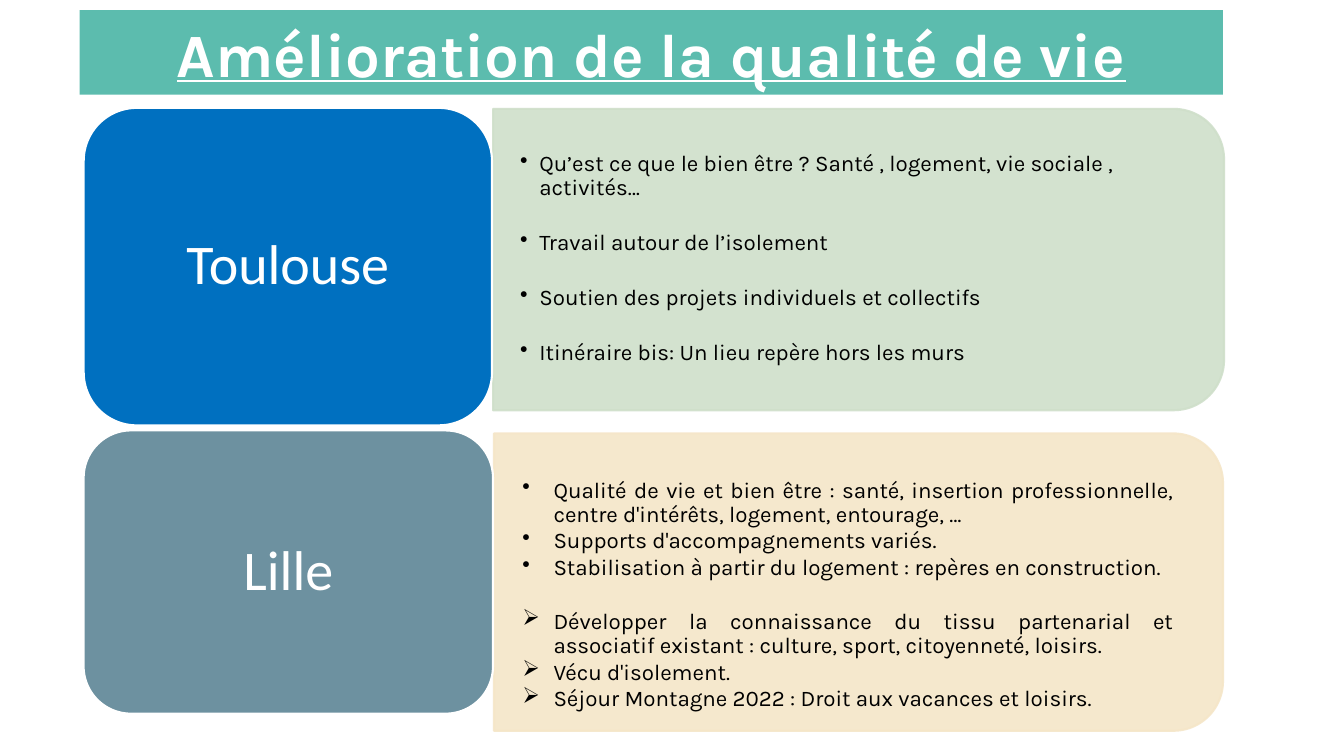
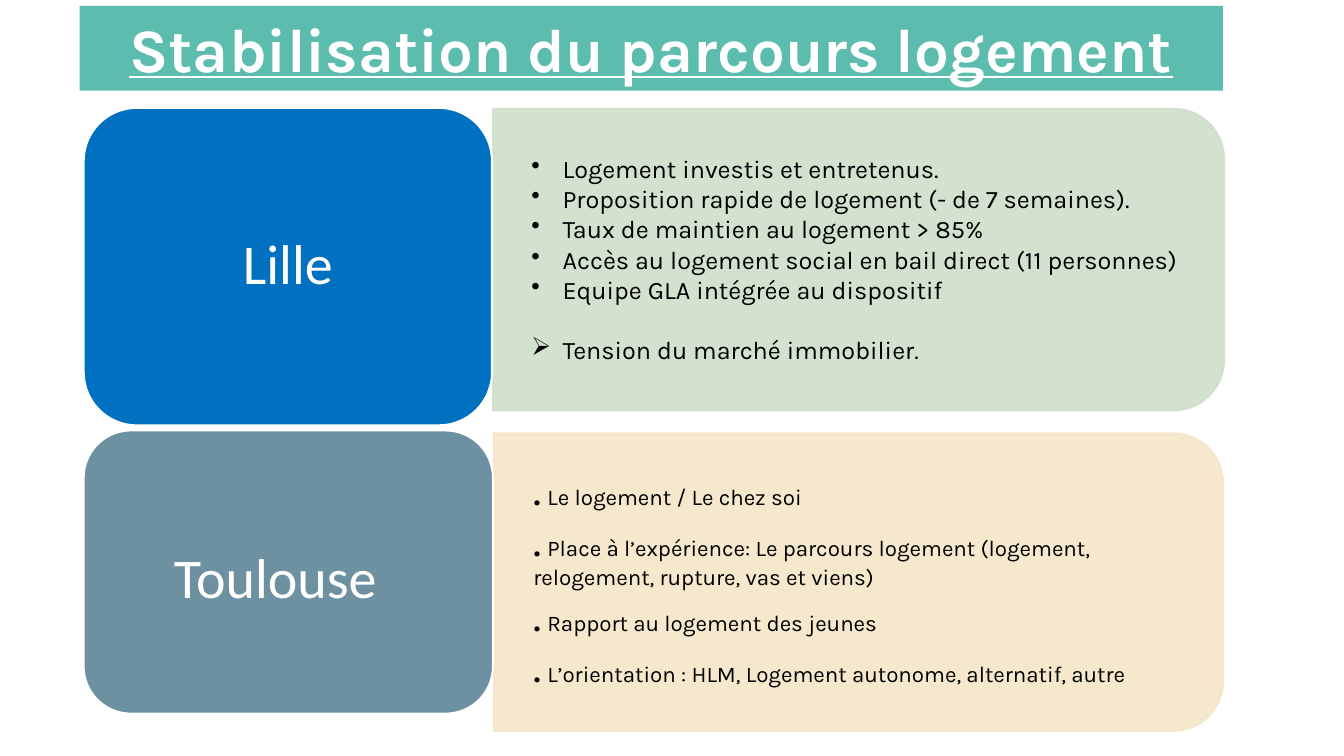
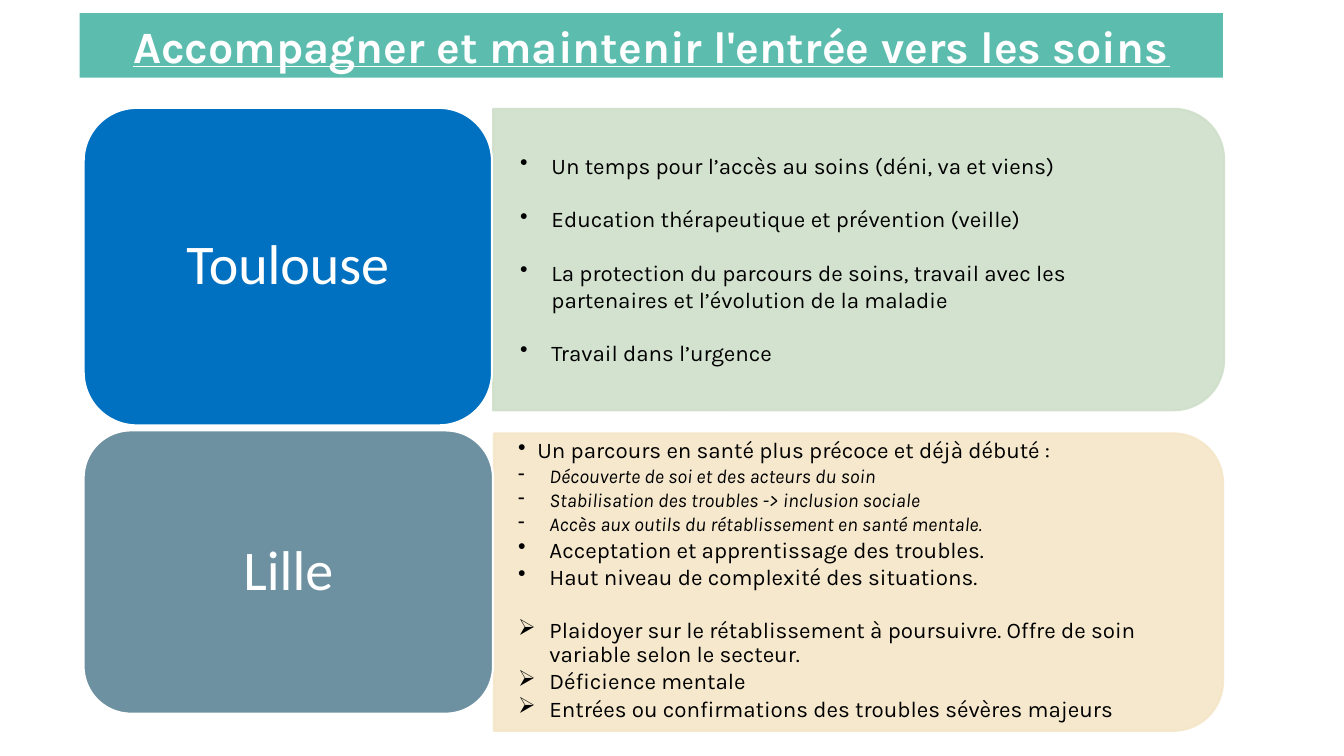
from dataclasses import dataclass
from typing import NamedTuple

from lxml.etree import SubElement
from pptx import Presentation
from pptx.dml.color import RGBColor
from pptx.enum.shapes import MSO_SHAPE as Preset
from pptx.enum.text import MSO_ANCHOR as Anchor, PP_ALIGN as Align
from pptx.oxml.ns import qn
from pptx.util import Emu, Pt

SCALE = 9144  # EMU per px, 100 px to the inch
COLOURS = {
    "banner": "5CBCAE", "blue": "0070C0", "slate": "6D91A0",
    "green": "CFDFCA", "sand": "F5E6C8", "white": "FFFFFF", "black": "000000",
}
BODY_FONT, LABEL_FONT = "Karla", "Calibri"
CORNER = 0.167
DOT, ARROW, DASH = "•", "➢", "-"


class Box(NamedTuple):
    left: int
    top: int
    width: int
    height: int

    def emu(self) -> list[Emu]:
        return [px(value) for value in self]


class Row(NamedTuple):
    label_box: Box
    label_colour: str
    panel_box: Box
    panel_colour: str


@dataclass(frozen=True)
class Item:
    text: str
    mark: str = DOT
    size: int = 16
    gap: float | None = None  # points before, when it opens a new group
    indent: int | None = None
    italic: bool = False
    big_dot: bool = False


@dataclass(frozen=True)
class Panel:
    label: str
    body: Box
    items: list[Item]
    indent: int = 31
    margin: int = 0
    hanging: bool = True
    space: float = 0
    line_spacing: float = 0.9
    align: Align = Align.LEFT
    label_shift: tuple[int, int] = (0, 0)


@dataclass(frozen=True)
class Page:
    title: str
    top: int
    height: int
    size: int
    panels: tuple[Panel, Panel]


ROWS = (
    Row(Box(83, 107, 405, 315), "blue", Box(489, 108, 725, 299), "green"),
    Row(Box(83, 427, 406, 281), "slate", Box(490, 430, 723, 295), "sand"),
)


def px(value: float) -> Emu:
    return Emu(int(value * SCALE))


def rgb(name: str) -> RGBColor:
    return RGBColor.from_string(COLOURS[name])


def set_insets(frame, left: int, top: int, right: int, bottom: int) -> None:
    frame.word_wrap = True
    frame.vertical_anchor = Anchor.MIDDLE
    frame.margin_left, frame.margin_top = px(left), px(top)
    frame.margin_right, frame.margin_bottom = px(right), px(bottom)


def set_font(font, name: str, colour: str, size: int | None = None) -> None:
    font.name = name
    font.color.rgb = rgb(colour)
    if size:
        font.size = Pt(size)


def add_block(page, preset: Preset, box: Box, colour: str, line: str | None = None):
    shape = page.shapes.add_shape(preset, *box.emu())
    shape.shadow.inherit = False
    shape.fill.solid()
    shape.fill.fore_color.rgb = rgb(colour)
    if line:
        shape.line.color.rgb = rgb(line)
        shape.line.width = Pt(1.5)
    else:
        shape.line.fill.background()
    return shape


def add_banner(page, spec: Page) -> None:
    banner = add_block(page, Preset.RECTANGLE, Box(79, spec.top, 1134, spec.height), "banner")
    set_insets(banner.text_frame, 10, 5, 10, 5)
    para = banner.text_frame.paragraphs[0]
    para.alignment = Align.CENTER
    set_font(para.font, BODY_FONT, "white", spec.size)
    para.font.bold = para.font.underline = True
    para.add_run().text = spec.title


def add_panel_back(page, box: Box, colour: str) -> None:
    """Draw the panel upright, then turn it so its round corners face right."""
    turn = (box.width - box.height) // 2
    upright = Box(box.left + turn, box.top - turn, box.height, box.width)
    back = add_block(page, Preset.ROUND_2_SAME_RECTANGLE, upright, colour, colour)
    back.rotation = 90
    back.adjustments[0], back.adjustments[1] = CORNER, 0
    for tint in back._element.spPr.iter(qn("a:srgbClr")):
        SubElement(tint, qn("a:alpha"), val="90000")


def add_label(page, row: Row, panel: Panel) -> None:
    label = add_block(page, Preset.ROUNDED_RECTANGLE, row.label_box, row.label_colour, "white")
    label.adjustments[0] = CORNER
    right, down = panel.label_shift
    set_insets(label.text_frame, 17, 8 + 2 * down, 17 - 2 * right, 8)
    para = label.text_frame.paragraphs[0]
    para.alignment = Align.CENTER
    para.line_spacing = 0.9
    set_font(para.font, LABEL_FONT, "white", 40)
    para.add_run().text = panel.label


def set_bullet(para, mark: str, margin: int, hang: int) -> None:
    props = para._p.get_or_add_pPr()
    props.set("marL", str(px(margin)))
    props.set("indent", str(px(-hang)))
    if mark:
        colour = SubElement(props, qn("a:buClr"))
        SubElement(colour, qn("a:srgbClr"), val=COLOURS["black"])
        SubElement(props, qn("a:buChar"), char=mark)
    else:
        SubElement(props, qn("a:buNone"))


def add_item(para, item: Item, panel: Panel) -> None:
    indent = item.indent or panel.indent
    hang = indent if panel.hanging else 0
    set_bullet(para, item.mark, panel.margin + indent, hang)
    para.alignment = panel.align
    para.line_spacing = panel.line_spacing
    para.space_before = Pt(panel.space if item.gap is None else item.gap)
    set_font(para.font, BODY_FONT, "black", None if item.big_dot else item.size)
    para.font.italic = item.italic
    if item.big_dot:
        for text, size in ((".", 32), (" ", 18), (item.text, item.size)):
            span = para.add_run()
            span.text = text
            span.font.size = Pt(size)
    else:
        para.add_run().text = item.text


def add_body(page, panel: Panel) -> None:
    frame = page.shapes.add_textbox(*panel.body.emu()).text_frame
    set_insets(frame, 27, 14, 27, 14)
    for index, item in enumerate(panel.items):
        para = frame.add_paragraph() if index else frame.paragraphs[0]
        add_item(para, item, panel)


def add_page(deck, spec: Page) -> None:
    page = deck.slides.add_slide(deck.slide_layouts[6])
    add_banner(page, spec)
    for row, panel in zip(ROWS, spec.panels):
        add_panel_back(page, row.panel_box, row.panel_colour)
        add_body(page, panel)
        add_label(page, row, panel)


# Content
QUALITY = Page("Amélioration de la qualité de vie", 10, 84, 44, (
    Panel("Toulouse", Box(489, 122, 714, 270), [
        Item("Qu’est ce que le bien être ? Santé , logement, vie sociale , activités…"),
        Item("Travail autour de l’isolement", gap=22),
        Item("Soutien des projets individuels et collectifs", gap=22),
        Item("Itinéraire bis: Un lieu repère hors les murs", gap=22),
    ], indent=19, space=2.4),
    Panel("Lille", Box(478, 457, 713, 267), [
        Item("Qualité de vie et bien être : santé, insertion professionnelle, "
             "centre d'intérêts, logement, entourage, …"),
        Item("Supports d'accompagnements variés."),
        Item("Stabilisation à partir du logement : repères en construction."),
        Item("Développer la connaissance du tissu partenarial et associatif existant : "
             "culture, sport, citoyenneté, loisirs.", ARROW, gap=21),
        Item("Vécu d'isolement.", ARROW),
        Item("Séjour Montagne 2022 : Droit aux vacances et loisirs.", ARROW),
    ], margin=13, space=1.8, align=Align.JUSTIFY),
))

HOUSING = Page("Stabilisation du parcours logement", 6, 84, 44, (
    Panel("Lille", Box(500, 122, 714, 270), [
        Item("Logement investis et entretenus.", size=18),
        Item("Proposition rapide de logement (- de 7 semaines).", size=18),
        Item("Taux de maintien au logement > 85%", size=18),
        Item("Accès au logement social en bail direct (11 personnes)", size=18),
        Item("Equipe GLA intégrée au dispositif", size=18),
        Item("Tension du marché immobilier.", ARROW, size=18, gap=21.5),
    ], line_spacing=1.0),
    Panel("Toulouse", Box(490, 441, 713, 267), [
        Item(text, "", big_dot=True) for text in (
            "Le logement / Le chez soi",
            "Place à l’expérience: Le parcours logement (logement, relogement, "
            "rupture, vas et viens)",
            "Rapport au logement des jeunes",
            "L’orientation : HLM, Logement autonome, alternatif, autre",
        )
    ], indent=12, hanging=False, space=1.8, label_shift=(-13, 8)),
))

CARE = Page("Accompagner et maintenir l'entrée vers les soins", 13, 64, 32, (
    Panel("Toulouse", Box(489, 122, 714, 270), [
        Item("Un temps pour l’accès au soins (déni, va et viens)"),
        Item("Education thérapeutique et prévention (veille)", gap=19),
        Item("La protection du parcours de soins, travail avec les partenaires "
             "et l’évolution de la maladie", gap=19),
        Item("Travail dans l’urgence", gap=19),
    ], line_spacing=1.0),
    Panel("Lille", Box(487, 401, 713, 350), [
        Item("Un parcours en santé plus précoce et déjà débuté :", indent=19),
        Item("Découverte de soi et des acteurs du soin", DASH, 14, italic=True),
        Item("Stabilisation des troubles -> inclusion sociale", DASH, 14, italic=True),
        Item("Accès aux outils du rétablissement en santé mentale.", DASH, 14, italic=True),
        Item("Acceptation et apprentissage des troubles."),
        Item("Haut niveau de complexité des situations."),
        Item("Plaidoyer sur le rétablissement à poursuivre. Offre de soin variable "
             "selon le secteur.", ARROW, gap=21),
        Item("Déficience mentale", ARROW),
        Item("Entrées ou confirmations des troubles sévères majeurs", ARROW),
    ], space=2.1),
))


def main() -> None:
    deck = Presentation()
    deck.slide_width, deck.slide_height = px(1333), px(750)
    for spec in (QUALITY, HOUSING, CARE):
        add_page(deck, spec)
    deck.save("out.pptx")


if __name__ == "__main__":
    main()
